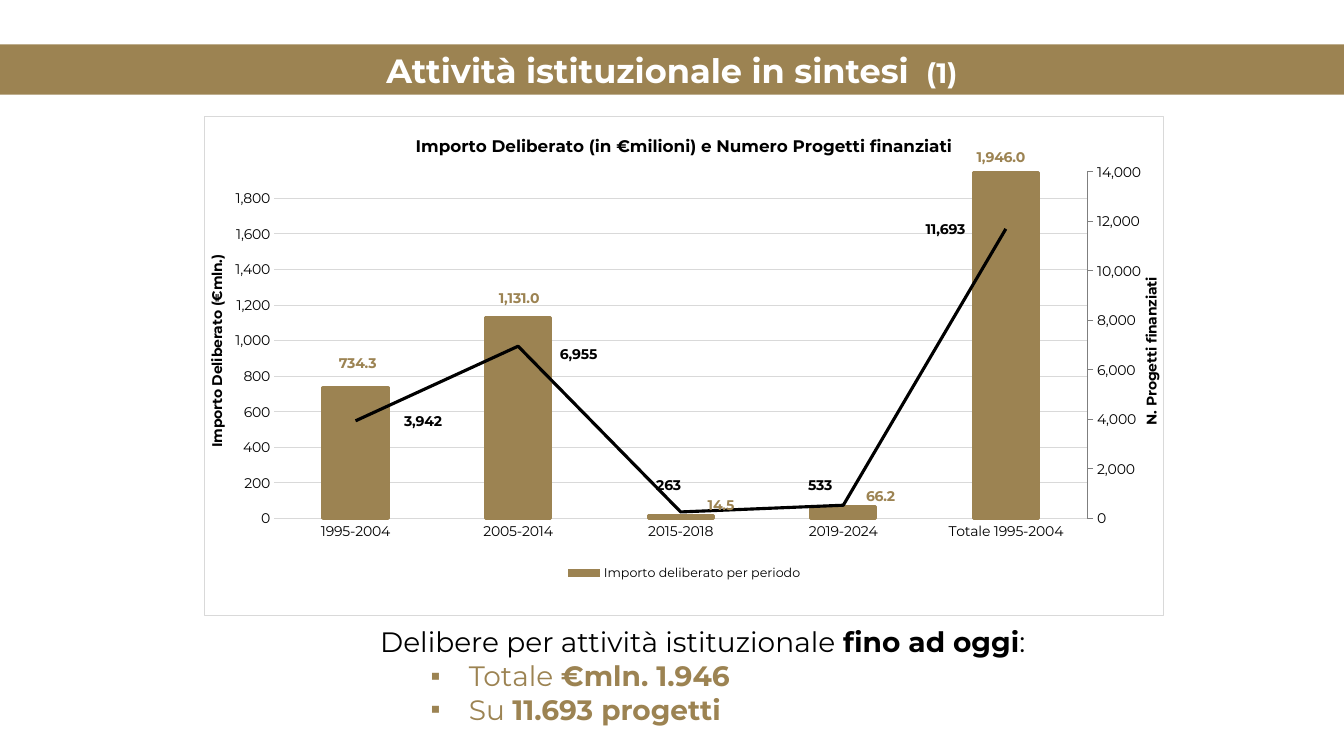
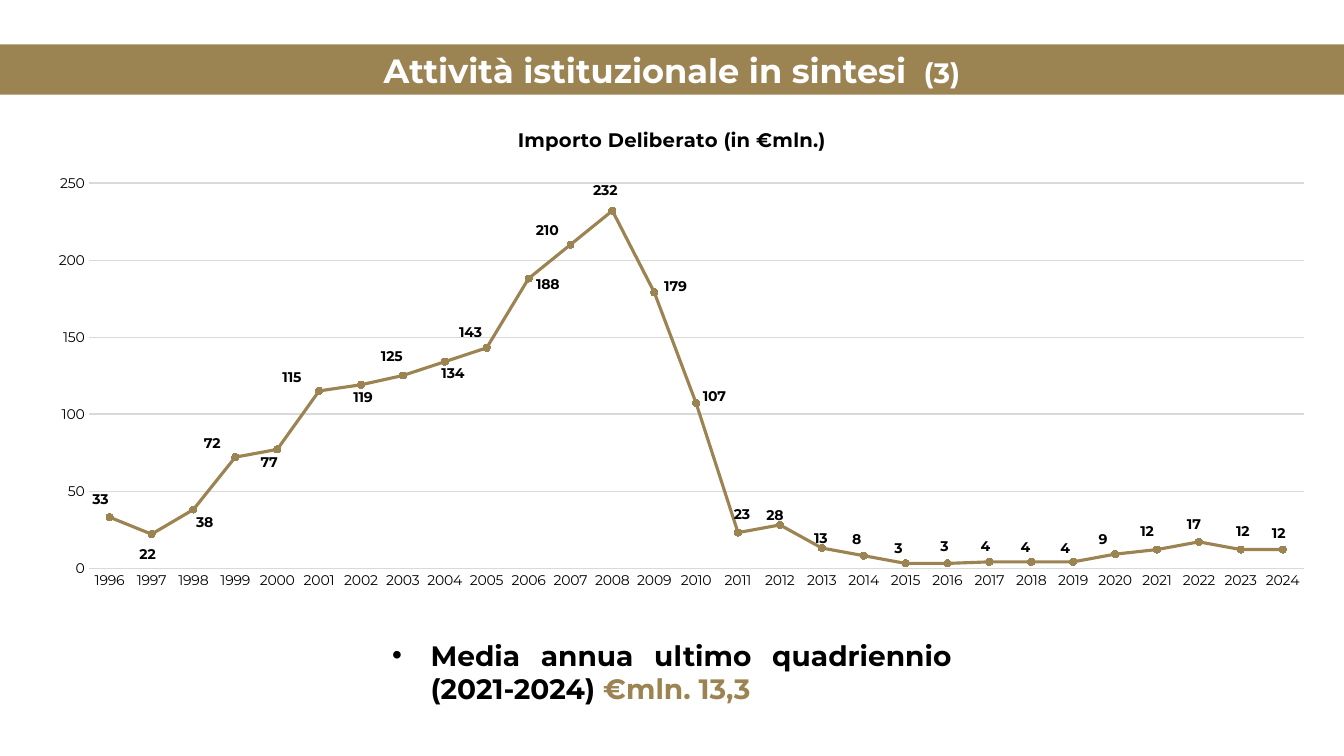
from dataclasses import dataclass
from typing import NamedTuple, Optional

import pptx
import pptx.chart.axis
import pptx.chart.chart
import pptx.chart.data
import pptx.dml.color
import pptx.enum.chart
import pptx.enum.text
import pptx.oxml
import pptx.oxml.ns
import pptx.util

Inches = pptx.util.Inches
Pt = pptx.util.Pt
RGBColor = pptx.dml.color.RGBColor
ChartType = pptx.enum.chart.XL_CHART_TYPE
LabelPosition = pptx.enum.chart.XL_LABEL_POSITION
TickMark = pptx.enum.chart.XL_TICK_MARK
Align = pptx.enum.text.PP_ALIGN

GOLD = RGBColor(0x9C, 0x83, 0x52)
BLACK = RGBColor(0, 0, 0)
WHITE = RGBColor(0xFF, 0xFF, 0xFF)
GRID = RGBColor(0xD9, 0xD9, 0xD9)
AXIS_GRAY = RGBColor(0x7F, 0x7F, 0x7F)
FONT = "Montserrat"
NAMESPACES = pptx.oxml.ns.nsdecls("c", "a")


class Frame(NamedTuple):
    left: float
    top: float
    width: float
    height: float


class Span(NamedTuple):
    text: str
    color: RGBColor = BLACK
    bold: bool = False
    size: float = 20


class Point(NamedTuple):
    """A value and the shift of its label, in inches."""
    value: float
    right: float
    down: float


@dataclass
class Line:
    spans: list[Span]
    bullet: Optional[str] = None
    indent: float = 0


@dataclass
class Series:
    name: str
    points: list[Point]
    number_format: str
    label_color: RGBColor
    label_position: LabelPosition


@dataclass
class ChartPlan:
    kind: ChartType
    frame: Frame
    title: str
    title_size: float
    title_left: float
    categories: list[str]
    series: list[Series]
    inner_plot: Frame
    maximum: float
    major_unit: float
    border: Optional[RGBColor] = None


BAND = Frame(0, 0.44, 13.33, 0.5)

PERIODS = ChartPlan(
    ChartType.COLUMN_CLUSTERED, Frame(2.02, 1.15, 9.53, 4.96),
    "Importo Deliberato (in €milioni) e Numero Progetti finanziati", 12, 2.07,
    ["1995-2004", "2005-2014", "2015-2018", "2019-2024", "Totale 1995-2004"],
    [
        Series("Importo deliberato per periodo", [
            Point(734.3, 0.02, -0.12), Point(1131, 0.01, -0.07), Point(14.5, 0.4, 0.02),
            Point(66.2, 0.37, 0.02), Point(1946, -0.05, -0.03),
        ], "#,##0.0", GOLD, LabelPosition.OUTSIDE_END),
        Series("Domande finanziate", [
            Point(3942, 0.67, 0), Point(6955, 0.6, 0.08), Point(263, -0.12, -0.27),
            Point(533, -0.23, -0.2), Point(11693, -0.6, 0),
        ], "#,##0", BLACK, LabelPosition.CENTER),
    ],
    Frame(0.073, 0.111, 0.847, 0.695), 1950, 200, GRID)

YEARS = ChartPlan(
    ChartType.LINE_MARKERS, Frame(0, 1.07, 13.33, 5.04),
    "Importo Deliberato (in €mln.)", 14, 5.1,
    [str(year) for year in range(1996, 2025)],
    [Series("Importo deliberato", [
        Point(33, -0.09, -0.18), Point(22, -0.04, 0.2), Point(38, 0.11, 0.13),
        Point(72, -0.23, -0.14), Point(77, -0.08, 0.13), Point(115, -0.27, -0.14),
        Point(119, 0.02, 0.12), Point(125, -0.11, -0.19), Point(134, 0.08, 0.11),
        Point(143, -0.16, -0.15), Point(188, 0.19, 0.06), Point(210, -0.23, -0.14),
        Point(232, -0.07, -0.2), Point(179, 0.21, -0.06), Point(107, 0.18, -0.07),
        Point(23, 0.04, -0.18), Point(28, -0.05, -0.1), Point(13, -0.01, -0.1),
        Point(8, -0.07, -0.16), Point(3, -0.07, -0.15), Point(3, -0.03, -0.17),
        Point(4, -0.04, -0.16), Point(4, -0.06, -0.15), Point(4, -0.08, -0.14),
        Point(9, -0.12, -0.15), Point(12, -0.1, -0.18), Point(17, -0.05, -0.18),
        Point(12, 0.02, -0.18), Point(12, -0.04, -0.16),
    ], "#,##0", BLACK, LabelPosition.CENTER)],
    Frame(0.066, 0.148, 0.904, 0.758), 250, 50)


def place(shape, frame: Frame) -> None:
    shape.left, shape.top, shape.width, shape.height = map(Inches, frame)


def style_font(font, size: float, color: RGBColor, bold: bool) -> None:
    font.name, font.size, font.bold = FONT, Pt(size), bold
    font.color.rgb = color


def add_spans(para, spans: list[Span]) -> None:
    for span in spans:
        run = para.add_run()
        run.text = span.text
        style_font(run.font, span.size, span.color, span.bold)


def add_title(slide, number: int) -> None:
    title = slide.shapes.title
    place(title, BAND)
    title.fill.solid()
    title.fill.fore_color.rgb = GOLD
    frame = title.text_frame
    frame.auto_size = pptx.enum.text.MSO_AUTO_SIZE.NONE
    frame.vertical_anchor = pptx.enum.text.MSO_ANCHOR.MIDDLE
    frame.paragraphs[0].alignment = Align.CENTER
    add_spans(frame.paragraphs[0], [
        Span("Attività istituzionale in sintesi ", WHITE, True, 24),
        Span(f" ({number})", WHITE, True, 20),
    ])


def add_body(slide, frame: Frame, lines: list[Line]) -> None:
    body = slide.placeholders[1]
    place(body, frame)
    text = body.text_frame
    text.auto_size = pptx.enum.text.MSO_AUTO_SIZE.NONE
    text.word_wrap = True
    for index, line in enumerate(lines):
        para = text.add_paragraph() if index else text.paragraphs[0]
        properties = para._p.get_or_add_pPr()
        properties.set("marL", str(Inches(line.indent)))
        properties.set("indent", str(Inches(-0.38 if line.bullet else 0)))
        bullet = f'<a:buChar {NAMESPACES} char="{line.bullet}"/>' if line.bullet else f"<a:buNone {NAMESPACES}/>"
        properties.append(pptx.oxml.parse_xml(bullet))
        para.alignment = Align.JUSTIFY if line.bullet else Align.LEFT
        para.space_before = Pt(0)
        add_spans(para, line.spans)


def set_layout(parent, index: int, x: float, y: float, size: Optional[tuple[float, float]] = None,
               edge: bool = True, inner: bool = False) -> None:
    """Put a manual layout, in fractions of the chart, at the given child index."""
    for old in parent.xpath("c:layout"):
        parent.remove(old)
    parts = ['<c:layoutTarget val="inner"/>'] if inner else []
    if edge:
        parts.append('<c:xMode val="edge"/><c:yMode val="edge"/>')
    parts.append(f'<c:x val="{x:.4f}"/><c:y val="{y:.4f}"/>')
    if size:
        parts.append(f'<c:w val="{size[0]}"/><c:h val="{size[1]}"/>')
    parent.insert(index, pptx.oxml.parse_xml(
        f'<c:layout {NAMESPACES}><c:manualLayout>{"".join(parts)}</c:manualLayout></c:layout>'))


def style_line(line, color: RGBColor, width: float) -> None:
    line.color.rgb = color
    line.width = Pt(width)


def style_value_axis(axis, maximum: float, major_unit: float) -> None:
    axis.minimum_scale, axis.maximum_scale, axis.major_unit = 0, maximum, major_unit
    axis.tick_labels.number_format = "#,##0"
    axis.tick_labels.number_format_is_linked = False
    axis.minor_tick_mark = TickMark.NONE


def add_axis_title(axis, text: str) -> None:
    frame = axis.axis_title.text_frame
    add_spans(frame.paragraphs[0], [Span(text, BLACK, True, 10)])
    frame._txBody.bodyPr.set("rot", "-5400000")
    frame._txBody.bodyPr.set("vert", "horz")


def label_points(drawn, series: Series, frame: Frame) -> None:
    labels = drawn.data_labels
    labels.show_value = True
    labels.number_format = series.number_format
    labels.number_format_is_linked = False
    style_font(labels.font, 10, series.label_color, True)
    for leader in drawn._element.xpath("c:dLbls/c:showLeaderLines"):
        leader.set("val", "0")
    for index in range(len(series.points)):
        label = drawn.points[index].data_label
        style_font(label.font, 10, series.label_color, True)
        label.position = series.label_position
    for element, point in zip(drawn._element.xpath("c:dLbls/c:dLbl"), series.points):
        set_layout(element, 1, point.right / frame.width, point.down / frame.height, edge=False)


def move_to_right_axis(chart: pptx.chart.chart.Chart) -> pptx.chart.axis.ValueAxis:
    """Turn the second column series into a line on its own right-hand axis."""
    columns = chart.plots[0]._element
    series = columns.xpath("c:ser")[1]
    for flag in series.xpath("c:invertIfNegative"):
        series.remove(flag)
    line_chart = pptx.oxml.parse_xml(
        f'<c:lineChart {NAMESPACES}><c:grouping val="standard"/><c:varyColors val="0"/>'
        '<c:marker val="1"/><c:axId val="5001"/><c:axId val="5002"/></c:lineChart>')
    line_chart.insert(2, series)
    columns.addnext(line_chart)

    def axis_xml(tag: str, own: int, other: int, hidden: int, side: str, crosses: str):
        return pptx.oxml.parse_xml(
            f'<c:{tag} {NAMESPACES}><c:axId val="{own}"/><c:scaling><c:orientation val="minMax"/></c:scaling>'
            f'<c:delete val="{hidden}"/><c:axPos val="{side}"/><c:majorTickMark val="out"/>'
            f'<c:minorTickMark val="none"/><c:tickLblPos val="nextTo"/><c:crossAx val="{other}"/>'
            f'<c:crosses val="{crosses}"/></c:{tag}>')

    category_axis = axis_xml("catAx", 5001, 5002, 1, "b", "autoZero")
    value_axis = axis_xml("valAx", 5002, 5001, 0, "r", "max")
    chart.value_axis._element.addnext(value_axis)
    value_axis.addnext(category_axis)
    return pptx.chart.axis.ValueAxis(value_axis)


def add_chart(slide, plan: ChartPlan) -> pptx.chart.chart.Chart:
    data = pptx.chart.data.CategoryChartData()
    data.categories = plan.categories
    for series in plan.series:
        data.add_series(series.name, [point.value for point in series.points], series.number_format)
    chart = slide.shapes.add_chart(plan.kind, *map(Inches, plan.frame), data).chart
    style_font(chart.font, 10, BLACK, False)
    chart.has_legend = False
    border = f'<a:solidFill><a:srgbClr val="{plan.border}"/></a:solidFill>' if plan.border else "<a:noFill/>"
    chart._chartSpace.chart.addnext(pptx.oxml.parse_xml(
        f'<c:spPr {NAMESPACES}><a:solidFill><a:srgbClr val="{WHITE}"/></a:solidFill>'
        f'<a:ln w="{Pt(0.75)}">{border}</a:ln></c:spPr>'))

    chart.has_title = True
    title = chart.chart_title
    add_spans(title.text_frame.paragraphs[0], [Span(plan.title, BLACK, True, plan.title_size)])
    title.include_in_layout = False
    set_layout(title._element, 1, plan.title_left / plan.frame.width, 0.15 / plan.frame.height)
    plot = plan.inner_plot
    set_layout(chart._chartSpace.chart.plotArea, 0, plot.left, plot.top, (plot.width, plot.height), inner=True)

    chart.category_axis.has_major_gridlines = False
    chart.category_axis.major_tick_mark = TickMark.NONE
    style_line(chart.category_axis.format.line, GRID, 0.75)
    axis = chart.value_axis
    style_value_axis(axis, plan.maximum, plan.major_unit)
    axis.major_tick_mark = TickMark.NONE
    axis.format.line.fill.background()
    style_line(axis.major_gridlines.format.line, GRID, 0.75)
    chart.plots[0].vary_by_categories = False
    return chart


def add_period_chart(slide) -> None:
    chart = add_chart(slide, PERIODS)
    left_axis = chart.value_axis
    right_axis = move_to_right_axis(chart)
    style_value_axis(right_axis, 14000, 2000)
    style_line(right_axis.format.line, AXIS_GRAY, 0.75)
    add_axis_title(left_axis, "Importo Deliberato (€mln.)")
    add_axis_title(right_axis, "N. Progetti finanziati")
    chart.plots[0].gap_width = 150
    columns, line = (plot.series[0] for plot in chart.plots)
    columns.format.fill.solid()
    columns.format.fill.fore_color.rgb = GOLD
    style_line(columns.format.line, GOLD, 2.25)
    style_line(line.format.line, BLACK, 2.25)
    line.marker.style = pptx.enum.chart.XL_MARKER_STYLE.NONE
    line.smooth = False
    for drawn, series in zip((columns, line), PERIODS.series):
        label_points(drawn, series, PERIODS.frame)
    chart.has_legend = True
    chart.legend.include_in_layout = False
    style_font(chart.legend.font, 9, BLACK, False)
    set_layout(chart.legend._element, 1, 0.37, 0.89, (0.26, 0.05))


def add_year_chart(slide) -> None:
    line = add_chart(slide, YEARS).plots[0].series[0]
    style_line(line.format.line, GOLD, 2.25)
    line.smooth = False
    line.marker.style = pptx.enum.chart.XL_MARKER_STYLE.CIRCLE
    line.marker.size = 5
    line.marker.format.fill.solid()
    line.marker.format.fill.fore_color.rgb = GOLD
    style_line(line.marker.format.line, GOLD, 0.75)
    label_points(line, YEARS.series[0], YEARS.frame)


def main() -> None:
    deck = pptx.Presentation()
    deck.slide_width, deck.slide_height = Inches(13.33), Inches(7.5)
    layout = deck.slide_layouts[1]

    page = deck.slides.add_slide(layout)
    add_title(page, 1)
    add_period_chart(page)
    add_body(page, Frame(3.67, 6.15, 6.72, 1.11), [
        Line([Span("Delibere per attività istituzionale "), Span("fino ad oggi", bold=True), Span(":")]),
        Line([Span("Totale ", GOLD), Span("€mln. 1.946", GOLD, True)], "▪", 0.88),
        Line([Span("Su ", GOLD), Span("11.693 progetti", GOLD, True)], "▪", 0.88),
    ])

    page = deck.slides.add_slide(layout)
    add_title(page, 3)
    add_year_chart(page)
    add_body(page, Frame(3.79, 6.28, 5.75, 0.77), [
        Line([Span("Media annua ultimo quadriennio (2021-2024) ", bold=True),
              Span("€mln. 13,3", GOLD, True)], "•", 0.38),
    ])
    deck.save("out.pptx")


if __name__ == "__main__":
    main()
